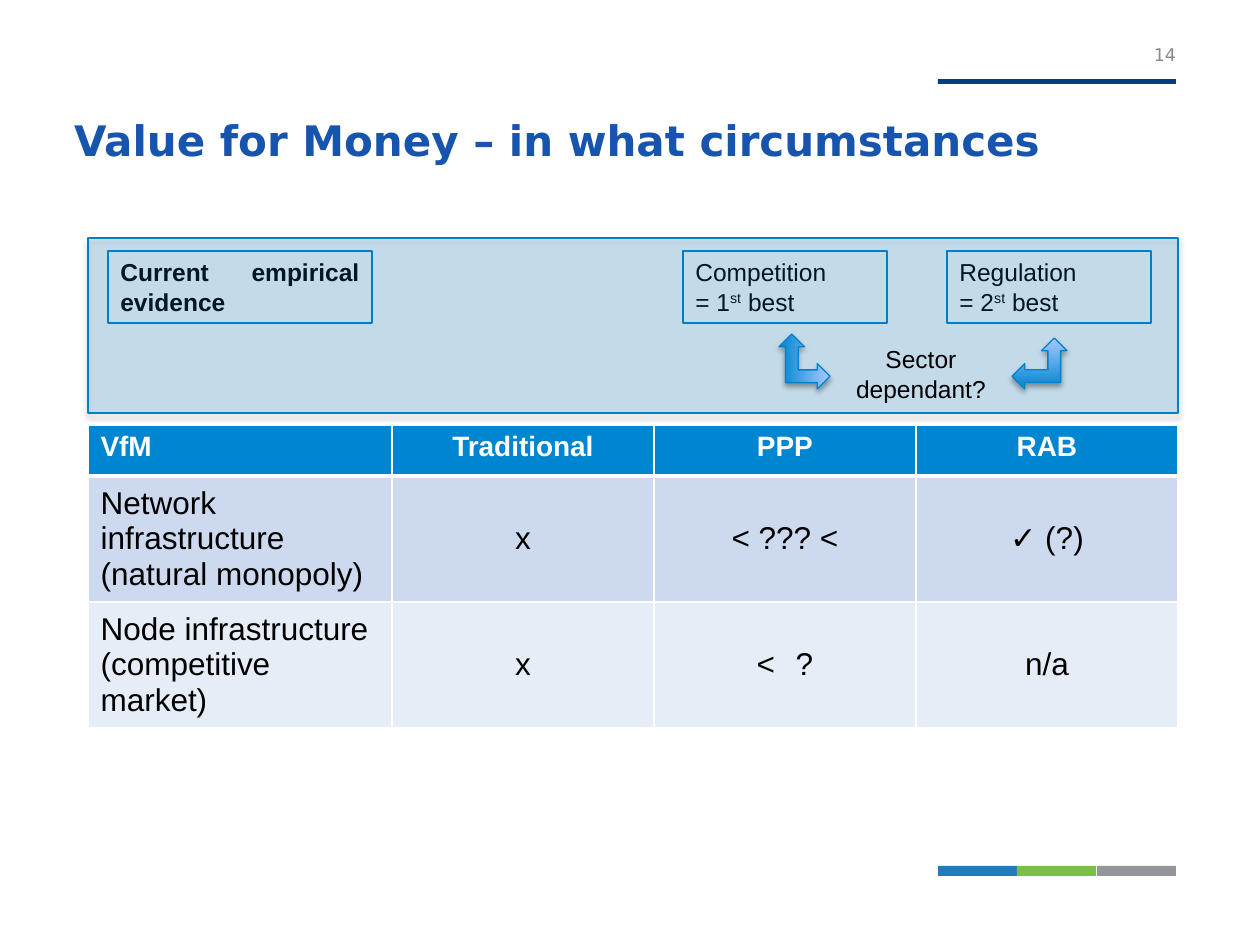
from lxml import etree
from pptx import Presentation, util as u
from pptx.dml.color import RGBColor
from pptx.enum import shapes, text
from pptx.oxml import parse_xml
from pptx.oxml.ns import nsdecls, qn

LEFT, CENTER, RIGHT, JUSTIFY = (text.PP_ALIGN.LEFT, text.PP_ALIGN.CENTER,
                                text.PP_ALIGN.RIGHT, text.PP_ALIGN.JUSTIFY)
TOP, MIDDLE, BOTTOM = text.MSO_ANCHOR.TOP, text.MSO_ANCHOR.MIDDLE, text.MSO_ANCHOR.BOTTOM
RECT, ARROW = shapes.MSO_SHAPE.RECTANGLE, shapes.MSO_SHAPE.LEFT_UP_ARROW


def px(n):
    return u.Emu(round(n * 914400 / 126))


def color(value):
    return RGBColor.from_string(value)


class Deck:
    body, heading = "Arial", "DejaVu Sans"
    blue, edge, light, black, white = "0085D0", "0082CB", "A7C9FF", "000000", "FFFFFF"

    def __init__(self):
        self.prs = Presentation()
        self.prs.slide_width, self.prs.slide_height = px(1260), px(945)
        self.slide = self.prs.slides.add_slide(self.prs.slide_layouts[6])

    def set_lines(self, frame, lines, size, align=LEFT, hue=black, bold=False, font=body, bullet=None):
        for i, line in enumerate(lines):
            paragraph = frame.paragraphs[0] if i == 0 else frame.add_paragraph()
            paragraph.alignment = align
            if bullet:
                props = paragraph._p.get_or_add_pPr()
                props.set("marL", str(px(39)))
                props.set("indent", str(-px(39)))
                etree.SubElement(props, qn("a:buFont"), typeface=font)
                etree.SubElement(props, qn("a:buChar"), char=bullet)
            for j, part in enumerate(line.split("^")):
                run = paragraph.add_run()
                run.text = part
                if j == 1:
                    run.font._element.set("baseline", "30000")
            style = paragraph.font
            style.name, style.size, style.bold = font, u.Pt(size), bold
            style.color.rgb = color(hue)

    def text(self, box, lines, size, anchor=TOP, insets=None, **style):
        frame = self.slide.shapes.add_textbox(*map(px, box)).text_frame
        frame.word_wrap, frame.vertical_anchor = True, anchor
        if insets:
            (frame.margin_left, frame.margin_top,
             frame.margin_right, frame.margin_bottom) = map(px, insets)
        self.set_lines(frame, lines, size, **style)

    def shape(self, kind, box, fill=None, line=None, shadow=False):
        shape = self.slide.shapes.add_shape(kind, *map(px, box))
        if fill:
            shape.fill.solid()
            shape.fill.fore_color.rgb = color(fill)
        else:
            shape.fill.background()
        if line:
            shape.line.color.rgb, shape.line.width = color(line), u.Pt(0.75)
        else:
            shape.line.fill.background()
        shape.shadow.inherit = False
        if shadow:
            effects = shape._element.spPr.find(qn("a:effectLst"))
            effects.append(parse_xml(
                f'<a:outerShdw {nsdecls("a")} blurRad="{u.Pt(3.1)}" dist="{u.Pt(1.8)}" '
                'dir="5400000" rotWithShape="0"><a:srgbClr val="000000">'
                '<a:alpha val="35000"/></a:srgbClr></a:outerShdw>'))
        return shape

    def label(self, box, lines, bold=False):
        frame = self.shape(RECT, box, line=self.blue).text_frame
        frame.word_wrap, frame.vertical_anchor = True, TOP
        self.set_lines(frame, lines, 14, align=JUSTIFY, bold=bold)

    def panel(self, box, opacity):
        panel = self.shape(RECT, box, self.blue, self.edge, shadow=True)
        tint = panel._element.spPr.find(qn("a:solidFill"))[0]
        etree.SubElement(tint, qn("a:alpha"), val=str(opacity * 1000))

    def arrow(self, box, rotation=0):
        arrow = self.shape(ARROW, box, self.blue, self.edge, shadow=True)
        arrow.rotation = rotation
        arrow.fill.gradient()
        arrow.fill.gradient_angle = 90
        for stop, hue in zip(arrow.fill.gradient_stops, (self.blue, self.light)):
            stop.color.rgb = color(hue)

    def borders(self, cell, bottom):
        props = cell._tc.get_or_add_tcPr()
        for i, (side, width) in enumerate(zip("LRTB", (1, 1, 1, bottom))):
            props.insert(i, parse_xml(
                f'<a:ln{side} {nsdecls("a")} w="{u.Pt(width)}"><a:solidFill>'
                f'<a:srgbClr val="{self.white}"/></a:solidFill></a:ln{side}>'))

    def table(self, box, widths, heights, rows, fills):
        table = self.slide.shapes.add_table(len(rows), len(widths), *map(px, box)).table
        for column, width in zip(table.columns, widths):
            column.width = px(width)
        for r, (values, fill) in enumerate(zip(rows, fills)):
            table.rows[r].height = px(heights[r])
            header = r == 0
            for c, value in enumerate(values):
                cell = table.cell(r, c)
                cell.fill.solid()
                cell.fill.fore_color.rgb = color(fill)
                cell.vertical_anchor = TOP if header else MIDDLE
                self.borders(cell, 3 if header else 1)
                bullet = "<" if value == "?" else None
                self.set_lines(cell.text_frame, value.split("\n"), 16 if header else 18,
                               align=CENTER if c else LEFT, bold=header,
                               hue=self.white if header else self.black, bullet=bullet)


def main():
    deck = Deck()
    deck.shape(RECT, (938, 79, 238, 5), "003E7E")
    for i, stripe in enumerate(("1C7CC2", "7BC042", "939598")):
        deck.shape(RECT, (938 + round(i * 238 / 3), 866, 79, 10), stripe)

    deck.text((74, 37, 1090, 138), ["Value for Money – in what circumstances"], 24, BOTTOM,
              (0, 0, 0, 10), hue="1754AD", bold=True, font=deck.heading)
    deck.table((88, 425, 1090, 287), (304, 262, 262, 262), (51, 118, 118), [
        ("VfM", "Traditional", "PPP", "RAB"),
        ("Network infrastructure\n(natural monopoly)", "x", "< ??? <", "✓ (?)"),
        ("Node infrastructure (competitive market)", "x", "?", "n/a"),
    ], (deck.blue, "CCD9EE", "E7EDF7"))
    deck.text((1114, 15, 62, 50), ["14"], 10, BOTTOM, (0, 0, 0, 0),
              align=RIGHT, hue="898989", font=deck.heading)

    deck.label((108, 251, 264, 72), ["Current empirical evidence"], bold=True)
    deck.label((683, 251, 204, 72), ["Competition", "= 1^st^ best"])
    deck.label((947, 251, 204, 72), ["Regulation", "= 2^st^ best"])
    deck.panel((88, 238, 1090, 175), 18)
    deck.text((819, 338, 204, 72), ["Sector dependant?"], 14, align=CENTER)
    deck.arrow((777, 336, 55, 51), rotation=90)
    deck.arrow((1012, 338, 55, 51))

    deck.prs.save("out.pptx")


if __name__ == "__main__":
    main()
